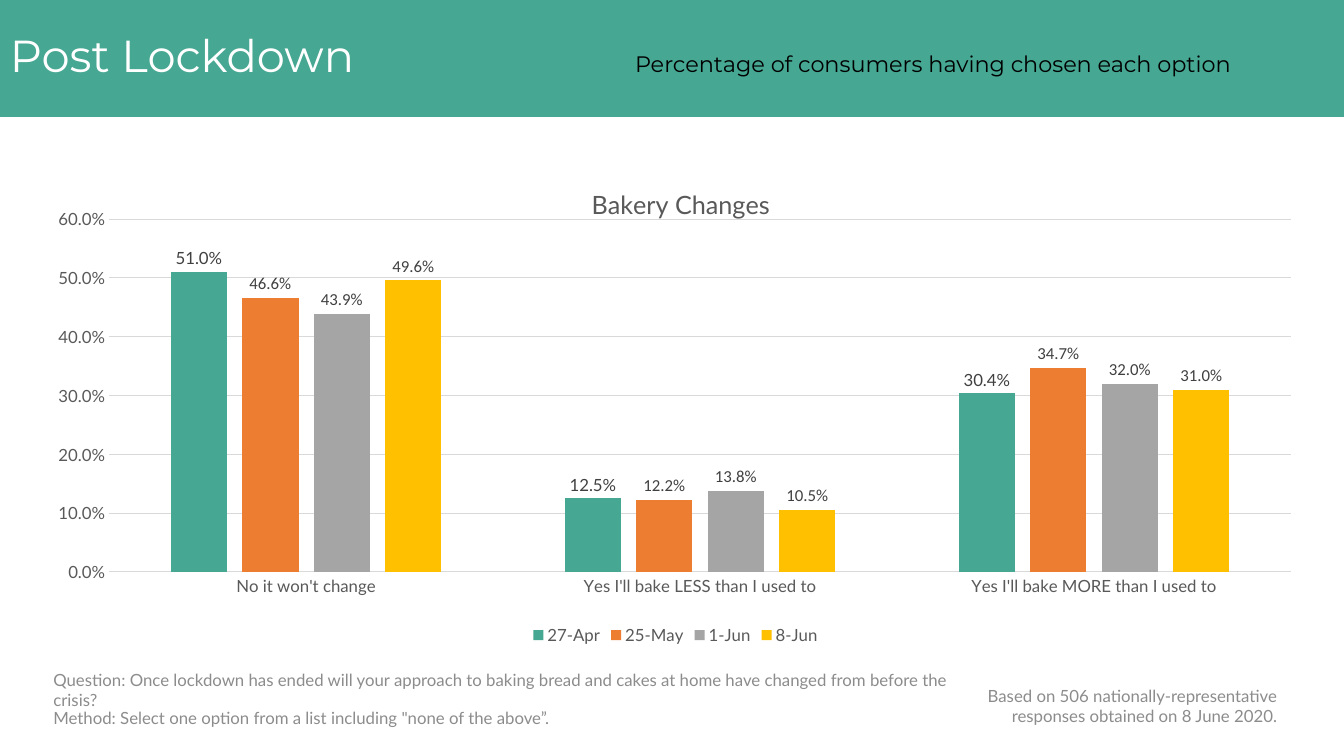
import pptx
import pptx.chart.data
import pptx.dml.color
import pptx.enum.chart
import pptx.enum.shapes
import pptx.enum.text
import pptx.oxml.ns
import pptx.util
from lxml import etree

Pt = pptx.util.Pt
RGBColor = pptx.dml.color.RGBColor
qn = pptx.oxml.ns.qn

GREEN = RGBColor(0x46, 0xA7, 0x92)
ORANGE = RGBColor(0xED, 0x7D, 0x31)
GREY = RGBColor(0xA5, 0xA5, 0xA5)
YELLOW = RGBColor(0xFF, 0xC0, 0x00)
WHITE = RGBColor(0xFF, 0xFF, 0xFF)
BLACK = RGBColor(0x00, 0x00, 0x00)
LABEL_GREY = RGBColor(0x40, 0x40, 0x40)
AXIS_GREY = RGBColor(0x59, 0x59, 0x59)
GRID_GREY = RGBColor(0xD9, 0xD9, 0xD9)
NOTE_GREY = RGBColor(0x8C, 0x8C, 0x8C)


def style_font(font, name, size, color):
    font.name = name
    font.size = Pt(size)
    font.color.rgb = color
    font.bold = False


def place(parent, index, settings):
    for layout in parent.findall(qn("c:layout")):
        parent.remove(layout)
    layout = etree.Element(qn("c:layout"))
    manual = etree.SubElement(layout, qn("c:manualLayout"))
    for tag, value in settings.items():
        etree.SubElement(manual, qn("c:" + tag)).set("val", str(value))
    parent.insert(index, layout)


presentation = pptx.Presentation()
presentation.slide_width = Pt(960)
presentation.slide_height = Pt(540)
slide = presentation.slides.add_slide(presentation.slide_layouts[6])

banner = slide.shapes.add_shape(
    pptx.enum.shapes.MSO_SHAPE.RECTANGLE, Pt(0), Pt(0), Pt(960), Pt(83.5)
)
banner.shadow.inherit = False
banner.fill.solid()
banner.fill.fore_color.rgb = GREEN
banner.line.fill.background()
banner.text_frame.vertical_anchor = pptx.enum.text.MSO_ANCHOR.MIDDLE
paragraph = banner.text_frame.paragraphs[0]
paragraph.alignment = pptx.enum.text.PP_ALIGN.LEFT
paragraph.line_spacing = 0.9
tabs = etree.SubElement(paragraph._p.get_or_add_pPr(), qn("a:tabLst"))
tab = etree.SubElement(tabs, qn("a:tab"))
tab.set("pos", str(int(Pt(446.5))))
tab.set("algn", "l")
for text, size, color in (
    ("Post Lockdown", 32, WHITE),
    ("\tPercentage of consumers having chosen each option", 16, BLACK),
):
    run = paragraph.add_run()
    run.text = text
    style_font(run.font, "Montserrat", size, color)

chart_data = pptx.chart.data.CategoryChartData(number_format="0.0%")
chart_data.categories = [
    "No it won't change",
    "Yes I'll bake LESS than I used to",
    "Yes I'll bake MORE than I used to",
]
surveys = [
    ("27-Apr", (0.51, 0.125, 0.304), GREEN, "Lato"),
    ("25-May", (0.466, 0.122, 0.347), ORANGE, "Calibri"),
    ("1-Jun", (0.439, 0.138, 0.32), GREY, "Calibri"),
    ("8-Jun", (0.496, 0.105, 0.31), YELLOW, "Calibri"),
]
for name, values, color, label_font in surveys:
    chart_data.add_series(name, values)

chart = slide.shapes.add_chart(
    pptx.enum.chart.XL_CHART_TYPE.COLUMN_CLUSTERED,
    Pt(31), Pt(112.3), Pt(903), Pt(351.4), chart_data,
).chart
style_font(chart.font, "Calibri", 10, BLACK)

chart.has_title = True
run = chart.chart_title.text_frame.paragraphs[0].add_run()
run.text = "Bakery Changes"
style_font(run.font, "Lato", 18, AXIS_GREY)
chart.chart_title.include_in_layout = False
place(chart.chart_title._element, 1,
      {"xMode": "edge", "yMode": "edge", "x": 0.43, "y": 0.05})

chart.has_legend = True
chart.legend.position = pptx.enum.chart.XL_LEGEND_POSITION.BOTTOM
chart.legend.include_in_layout = False
style_font(chart.legend.font, "Lato", 12, AXIS_GREY)

for axis in (chart.category_axis, chart.value_axis):
    axis.major_tick_mark = pptx.enum.chart.XL_TICK_MARK.NONE
    axis.minor_tick_mark = pptx.enum.chart.XL_TICK_MARK.NONE
    style_font(axis.tick_labels.font, "Lato", 12, AXIS_GREY)
value_axis = chart.value_axis
value_axis.minimum_scale = 0
value_axis.maximum_scale = 0.6
value_axis.major_unit = 0.1
value_axis.tick_labels.number_format = "0.0%"
value_axis.tick_labels.number_format_is_linked = False
value_axis.format.line.fill.background()
for line in (chart.category_axis.format.line, value_axis.major_gridlines.format.line):
    line.color.rgb = GRID_GREY
    line.width = Pt(0.75)

plot = chart.plots[0]
plot.vary_by_categories = False
plot.gap_width = 219
plot.overlap = -27
for series, (name, values, color, label_font) in zip(plot.series, surveys):
    series.format.fill.solid()
    series.format.fill.fore_color.rgb = color
    labels = series.data_labels
    labels.show_value = True
    labels.number_format = "0.0%"
    labels.number_format_is_linked = False
    labels.position = pptx.enum.chart.XL_LABEL_POSITION.OUTSIDE_END
    style_font(labels.font, label_font, 12, LABEL_GREY)
place(plot._element.getparent(), 0, {
    "layoutTarget": "inner", "xMode": "edge", "yMode": "edge",
    "x": 0.052, "y": 0.126, "w": 0.935, "h": 0.717,
})

LEFT = pptx.enum.text.PP_ALIGN.LEFT
RIGHT = pptx.enum.text.PP_ALIGN.RIGHT
for text, left, top, width, alignment in (
    ("Question: Once lockdown has ended will your approach to baking bread and cakes "
     "at home have changed from before the crisis?", 31, 478, 686, LEFT),
    ("Method: Select one option from a list including \"none of the above”.",
     31, 498.5, 686, LEFT),
    ("Based on 506 nationally-representative responses obtained on 8 June 2020.",
     671, 489.5, 248.5, RIGHT),
):
    note = slide.shapes.add_textbox(Pt(left), Pt(top), Pt(width), Pt(29))
    note.text_frame.word_wrap = True
    note.text_frame.vertical_anchor = pptx.enum.text.MSO_ANCHOR.MIDDLE
    paragraph = note.text_frame.paragraphs[0]
    paragraph.alignment = alignment
    run = paragraph.add_run()
    run.text = text
    style_font(run.font, "Lato", 12, NOTE_GREY)

presentation.save("out.pptx")
